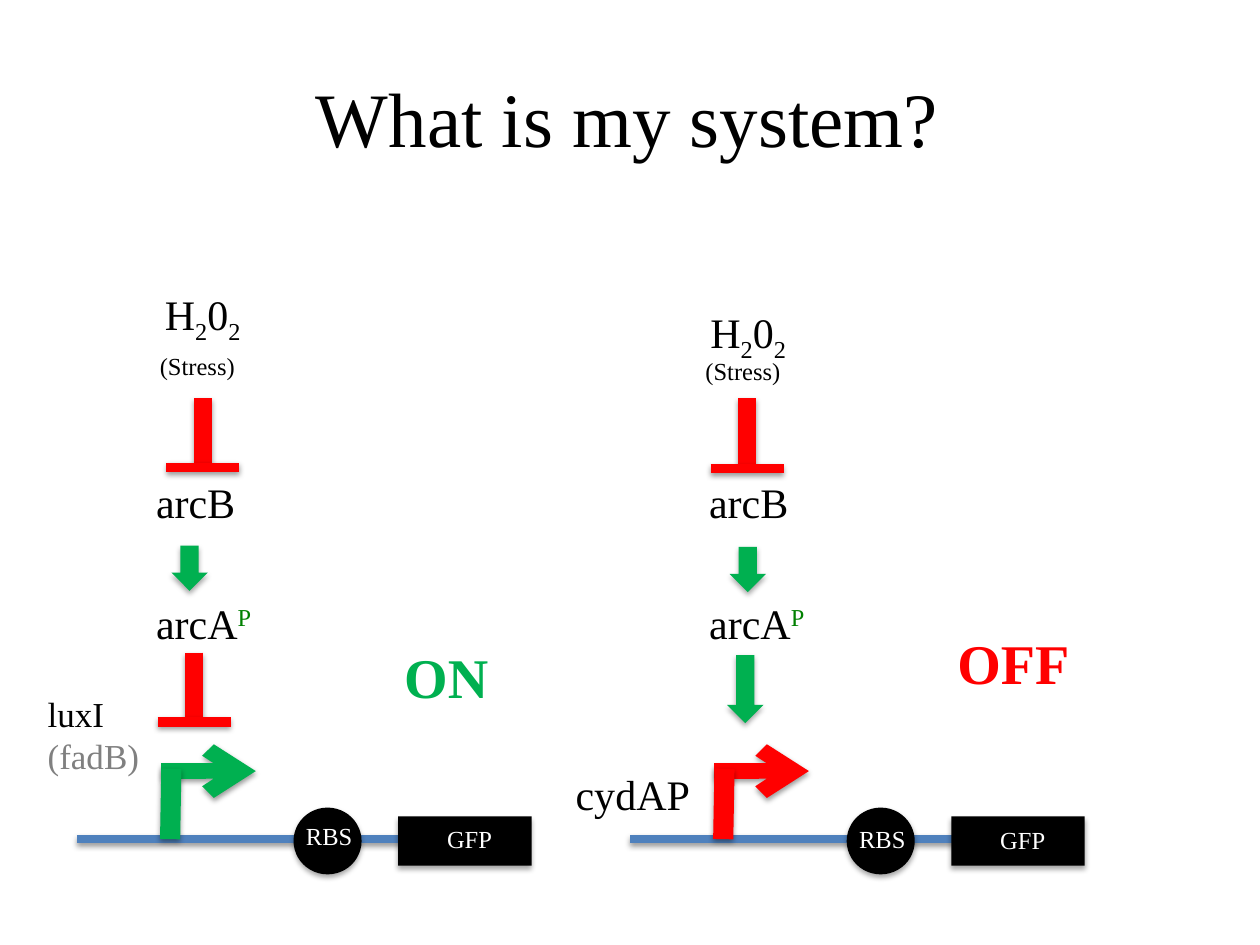
from lxml import etree
from pptx import Presentation
from pptx.dml.color import RGBColor
from pptx.enum.shapes import MSO_CONNECTOR, MSO_SHAPE
from pptx.enum.text import MSO_ANCHOR, PP_ALIGN
from pptx.oxml.ns import qn
from pptx.util import Pt

LINE = MSO_CONNECTOR.STRAIGHT
DOWN, OVAL, RECT = MSO_SHAPE.DOWN_ARROW, MSO_SHAPE.OVAL, MSO_SHAPE.RECTANGLE
MIDDLE, CENTER = MSO_ANCHOR.MIDDLE, PP_ALIGN.CENTER

BLACK = RGBColor(0x00, 0x00, 0x00)
WHITE = RGBColor(0xFF, 0xFF, 0xFF)
GRAY = RGBColor(0x80, 0x80, 0x80)
BLUE = RGBColor(0x4F, 0x81, 0xBD)
GREEN = RGBColor(0x00, 0xB0, 0x50)
DARK = RGBColor(0x00, 0x80, 0x00)
RED = RGBColor(0xFF, 0x00, 0x00)

PX = 9144  # 100 px to the inch
FONT = "Times New Roman"
SUB, SUP = -25, 30

# A run is (text, colour, baseline percent); a paragraph is a list of runs.
PEROXIDE = [[("H", BLACK, 0), ("2", BLACK, SUB), ("0", BLACK, 0), ("2", BLACK, SUB)]]
ARC_A = [[("arcA", BLACK, 0), ("P", DARK, SUP)]]


def plain(text, color=BLACK):
    return [[(text, color, 0)]]


TITLE = (48, 30, 900, 125)

# Labels are (paragraphs, size, box, wrap); bars are (centre x, stem top, foot y).
CIRCUITS = [
    {
        "left": 61,
        "gene": GREEN,
        "bars": [(161, 316, 371), (154, 518, 573)],
        "arrows": [(136, 433, 29, 36)],
        "labels": [
            (PEROXIDE, 24, (121, 224, 84, 50), False),
            (plain("(Stress)"), 14, (117, 274, 108, 34), True),
            ([[("luxI", BLACK, 0)], [("(fadB)", GRAY, 0)]], 20, (28, 545, 96, 118), True),
            (plain("RBS", WHITE), 14, (233, 647, 64, 34), True),
            (plain("GFP", WHITE), 14, (345, 649, 56, 34), False),
        ],
        "state": ("ON", (311, 505, 90, 64)),
    },
    {
        "left": 500,
        "gene": RED,
        "bars": [(593, 316, 372)],
        "arrows": [(579, 434, 29, 36), (577, 520, 29, 54)],
        "labels": [
            (PEROXIDE, 24, (554, 238, 84, 50), False),
            (plain("(Stress)"), 14, (550, 278, 108, 34), True),
            (plain("cydAP"), 24, (447, 605, 112, 50), False),
            (plain("RBS", WHITE), 14, (672, 649, 67, 34), True),
            (plain("GFP", WHITE), 14, (784, 650, 56, 34), False),
        ],
        "state": ("OFF", (750, 494, 110, 64)),
    },
]


def scale(nums):
    return [n * PX for n in nums]


def cast(shape, alpha, dist):
    """Give the shape a soft shadow straight below it."""
    fx = etree.SubElement(shape._element.spPr, qn("a:effectLst"))
    drop = etree.SubElement(fx, qn("a:outerShdw"), blurRad=str(Pt(3.1)),
                            dist=str(Pt(dist)), dir="5400000", rotWithShape="0")
    tint = etree.SubElement(drop, qn("a:srgbClr"), val=str(BLACK))
    etree.SubElement(tint, qn("a:alpha"), val=str(alpha * 1000))


def add_line(slide, ends, color, width, arrow=False):
    line = slide.shapes.add_connector(LINE, *scale(ends))
    line.line.color.rgb = color
    line.line.width = Pt(width)
    if arrow:
        etree.SubElement(line.line._get_or_add_ln(), qn("a:tailEnd"), type="arrow")
    cast(line, 38, 1.6)


def add_block(slide, kind, box, color):
    shape = slide.shapes.add_shape(kind, *scale(box))
    shape.fill.solid()
    shape.fill.fore_color.rgb = color
    shape.line.fill.background()
    cast(shape, 35, 1.8)


def add_label(slide, paras, size, box, wrap=True, bold=False):
    frame = slide.shapes.add_textbox(*scale(box)).text_frame
    frame.word_wrap = wrap
    for i, runs in enumerate(paras):
        para = frame.add_paragraph() if i else frame.paragraphs[0]
        for text, color, base in runs:
            run = para.add_run()
            run.text = text
            for key, val in {"name": FONT, "size": Pt(size), "bold": bold}.items():
                setattr(run.font, key, val)
            run.font.color.rgb = color
            if base:
                run._r.get_or_add_rPr().set("baseline", str(base * 1000))
    return frame


def add_bar(slide, mid, top, foot):
    """Draw a T-shaped inhibition mark."""
    add_line(slide, (mid, top, mid, foot - 2), RED, 10.25)
    add_line(slide, (mid - 29, foot, mid + 29, foot), RED, 5.5)


def add_circuit(slide, part):
    x, gene = part["left"], part["gene"]
    add_line(slide, (x, 666, x + 336, 666), BLUE, 4.75)
    add_line(slide, (x + 67, 612, x + 142, 612), gene, 8.75, arrow=True)
    add_line(slide, (x + 74, 666, x + 75, 610), gene, 11.5)
    add_block(slide, OVAL, (x + 172, 641, 54, 53), BLACK)
    add_block(slide, RECT, (x + 255, 648, 106, 39), BLACK)
    for bar in part["bars"]:
        add_bar(slide, *bar)
    for box in part["arrows"]:
        add_block(slide, DOWN, box, GREEN)
    add_label(slide, plain("arcB"), 24, (x + 53, 373, 83, 50))
    add_label(slide, ARC_A, 24, (x + 53, 469, 98, 50), wrap=False)
    for label in part["labels"]:
        add_label(slide, *label)
    word, box = part["state"]
    add_label(slide, plain(word, gene), 32, box, bold=True)


def main():
    deck = Presentation()
    deck.slide_width, deck.slide_height = scale((1000, 750))
    slide = deck.slides.add_slide(deck.slide_layouts[6])
    title = add_label(slide, plain("What is my system?"), 44, TITLE)
    title.vertical_anchor = MIDDLE
    title.paragraphs[0].alignment = CENTER
    for part in CIRCUITS:
        add_circuit(slide, part)
    deck.save("out.pptx")


if __name__ == "__main__":
    main()
